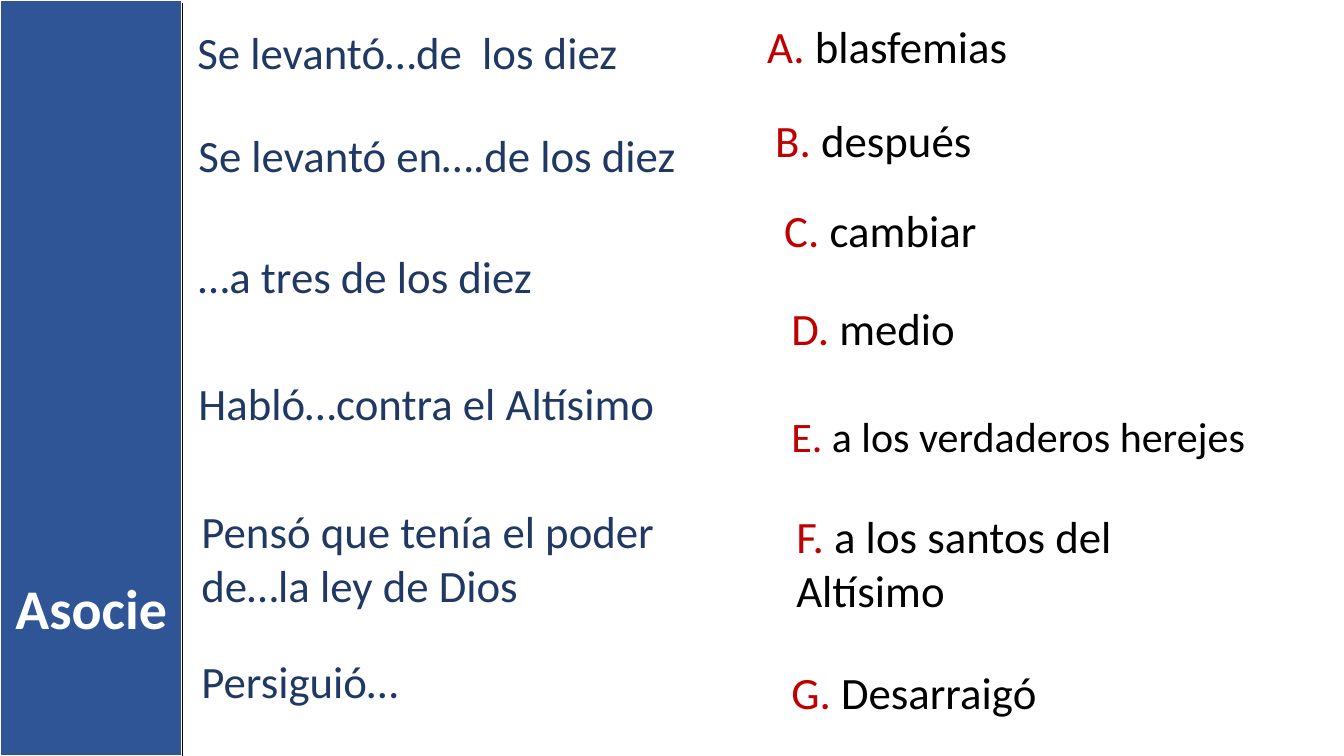
"""Build the matching exercise slide: phrases on the left, lettered answers on the right."""
from lxml.etree import SubElement
from pptx import Presentation
from pptx.dml.color import RGBColor
from pptx.enum.shapes import MSO_CONNECTOR, MSO_SHAPE
from pptx.enum.text import MSO_AUTO_SIZE as AutoSize, PP_ALIGN as Align
from pptx.oxml.ns import qn
from pptx.util import Inches, Pt

NAVY, RED, BLACK, WHITE, BLUE = "203864", "C00000", "000000", "FFFFFF", "2F5597"
LINE_SPACING = 1.22
BAND = 13.58

presentation = Presentation()
presentation.slide_width = Inches(13.33)
presentation.slide_height = Inches(7.5)
column = presentation.slide_width / 100
row = presentation.slide_height / 100
slide = presentation.slides.add_slide(presentation.slide_layouts[6])


def color(hex_text):
    return RGBColor.from_string(hex_text)


def add_text(left, top, width, runs, size=32, lines=1, bold=False, align=Align.LEFT):
    height = Pt(lines * size * LINE_SPACING) + Inches(0.1)
    box = slide.shapes.add_textbox(int(left * column), int(top * row), int(width * column), height)
    frame = box.text_frame
    frame.word_wrap = True
    frame.auto_size = AutoSize.SHAPE_TO_FIT_TEXT
    paragraph = frame.paragraphs[0]
    paragraph.alignment = align
    font_format = {"name": "Calibri", "size": Pt(size), "bold": bold}
    for text, hex_text in runs:
        run = paragraph.add_run()
        run.text = text
        run.font.color.rgb = color(hex_text)
        for attribute, value in font_format.items():
            setattr(run.font, attribute, value)


band = slide.shapes.add_shape(MSO_SHAPE.RECTANGLE, 0, 0, int(BAND * column), int(100 * row))
band.shadow.inherit = False
band.fill.solid()
band.fill.fore_color.rgb = color(BLUE)
band.line.color.rgb = color(WHITE)
band.line.width = Pt(1.5)

phrases = [
    (13.95, 2.67, 38.33, "Se levantó…de  los diez", 1),
    (14.03, 16.27, 39.31, "Se levantó en….de los diez", 1),
    (14.03, 32.27, 38.26, "…a tres de los diez", 1),
    (14.03, 49.07, 37.06, "Habló…contra el Altísimo", 1),
    (14.25, 66, 38.11, "Pensó que tenía el poder de…la ley de Dios", 2),
    (14.25, 85.87, 35.78, "Persiguió…", 1),
]
for left, top, width, phrase, lines in phrases:
    add_text(left, top, width, [(phrase, NAVY)], lines=lines)

answers = [
    (56.34, 1.87, 37.81, "blasfemias", 32, 1),
    (56.94, 14.27, 39.68, "después", 32, 1),
    (57.61, 26.13, 36.61, "cambiar", 32, 1),
    (58.14, 39.07, 41.49, "medio", 32, 1),
    (58.14, 53.6, 39.68, "a los verdaderos herejes", 30, 1),
    (58.51, 66.67, 36.61, "a los santos del Altísimo", 32, 2),
    (58.14, 87.2, 37.28, "Desarraigó", 32, 1),
]
for letter, (left, top, width, answer, size, lines) in zip("ABCDEFG", answers):
    add_text(left, top, width, [(f"{letter}. ", RED), (answer, BLACK)], size, lines)

add_text(0, 75.2, BAND, [("Asocie", WHITE)], size=40, bold=True, align=Align.CENTER)

edge = slide.shapes.add_connector(
    MSO_CONNECTOR.STRAIGHT, int(BAND * column), int(0.4 * row), int(BAND * column), int(100 * row)
)
edge.line.color.rgb = color(BLACK)
edge.line.width = Pt(1)
SubElement(edge._element.spPr, qn("a:effectLst"))

presentation.save("out.pptx")
